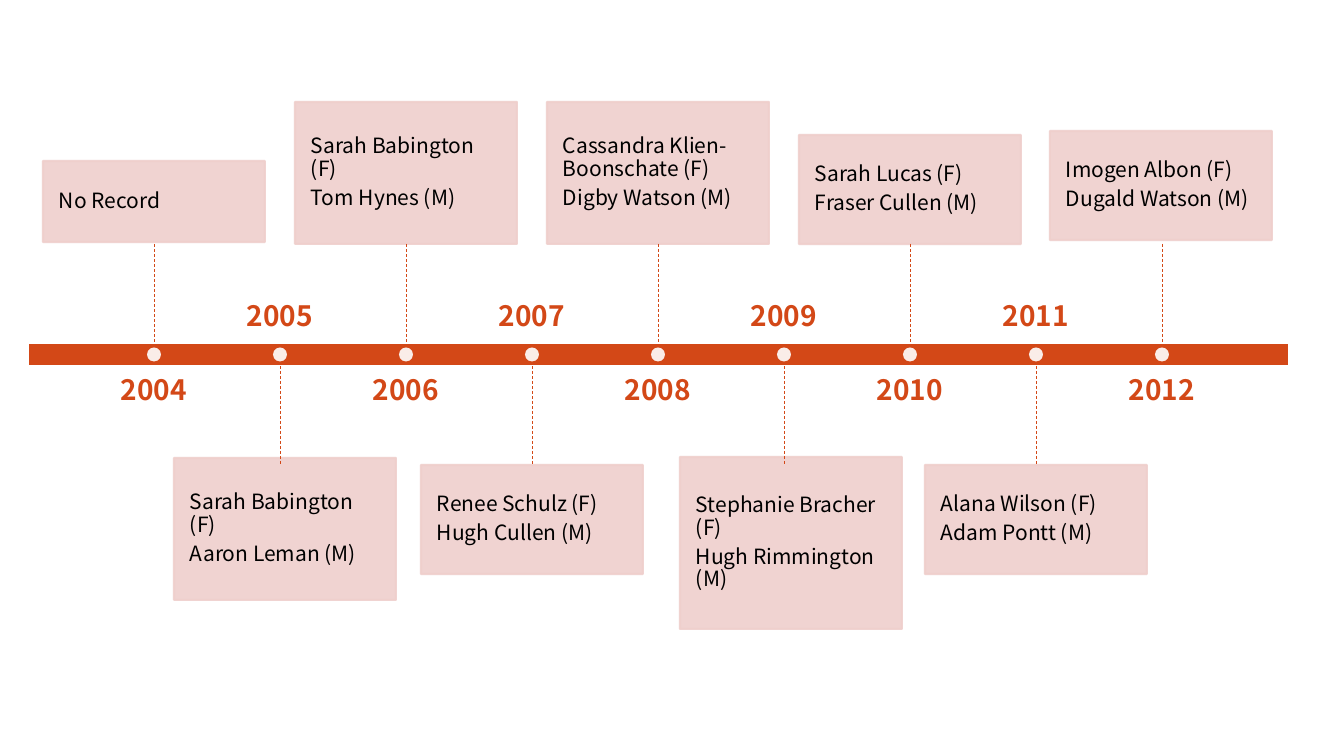
from lxml import etree
from pptx import Presentation
from pptx import util as u
from pptx.dml.color import RGBColor
from pptx.enum import dml, shapes, text
from pptx.oxml.ns import qn

PX = 914400 / 100.8
FIRST_YEAR, FIRST_X, YEAR_STEP = 2004, 154, 126
BAR_TOP, BAR_HEIGHT = 343, 23
BAR_BOTTOM = BAR_TOP + BAR_HEIGHT
STEM, CARD_WIDTH, DOT = 99, 222, 14
LABEL_WIDTH, LABEL_HEIGHT, LABEL_GAP = 202, 66, 10

# One entry per year: card shift from its year, top, height, names
CARDS = [
    (0, 161, 81, ["No Record"]),
    (5, 458, 142, ["Sarah Babington (F)", "Aaron Leman (M)"]),
    (0, 102, 142, ["Sarah Babington (F)", "Tom Hynes (M)"]),
    (0, 465, 109, ["Renee Schulz (F)", "Hugh Cullen (M)"]),
    (0, 102, 142, ["Cassandra Klien-Boonschate (F)", "Digby Watson (M)"]),
    (7, 457, 172, ["Stephanie Bracher (F)", "Hugh Rimmington (M)"]),
    (0, 135, 109, ["Sarah Lucas (F)", "Fraser Cullen (M)"]),
    (0, 465, 109, ["Alana Wilson (F)", "Adam Pontt (M)"]),
    (-1, 131, 109, ["Imogen Albon (F)", "Dugald Watson (M)"]),
]


def px(length):
    return u.Emu(round(length * PX))


def paint(fill, color, opacity=100):
    """Make a fill solid, with opacity in percent."""
    fill.solid()
    fill.fore_color.rgb = RGBColor.from_string(color)
    if opacity < 100:
        for srgb in fill._xPr.iter(qn("a:srgbClr")):
            etree.SubElement(srgb, qn("a:alpha"), val=str(opacity * 1000))


def write(frame, lines, size, color, bold=False, font="Noto Sans CJK JP", inset=0,
          align=text.PP_ALIGN.LEFT, anchor=text.MSO_ANCHOR.TOP, gap=4.5):
    """Fill a text frame with one paragraph for each line."""
    frame.word_wrap = True
    frame.vertical_anchor = anchor
    frame.margin_left = frame.margin_right = px(inset)
    frame.margin_top = frame.margin_bottom = px(inset)
    for index, line in enumerate(lines):
        paragraph = frame.add_paragraph() if index else frame.paragraphs[0]
        paragraph.alignment = align
        paragraph.line_spacing = 0.9
        paragraph.space_after = u.Pt(gap)
        run = paragraph.add_run()
        run.text = line
        run.font.name, run.font.size, run.font.bold = font, u.Pt(size), bold
        paint(run.font.fill, color)


class Timeline:
    accent, card_color, ink, paper = "D34817", "EFCFCC", "000000", "FFFFFF"
    opacity = 90

    def __init__(self, slide):
        self.slide = slide

    def block(self, kind, left, top, width, height, color, opacity=100):
        shape = self.slide.shapes.add_shape(kind, px(left), px(top), px(width), px(height))
        shape.shadow.inherit = False
        paint(shape.fill, color, opacity)
        shape.line.fill.background()
        return shape

    def outline(self, shape, color, opacity=100):
        paint(shape.line.fill, color, opacity)
        shape.line.width = u.Pt(1.5)

    def bar(self):
        bar = self.block(shapes.MSO_SHAPE.RECTANGLE, 28, BAR_TOP, 1261, BAR_HEIGHT, self.accent)
        self.outline(bar, self.paper)

    def year(self, center, year, above):
        top = BAR_TOP - LABEL_GAP - LABEL_HEIGHT if above else BAR_BOTTOM + LABEL_GAP
        label = self.slide.shapes.add_textbox(
            px(center - LABEL_WIDTH / 2), px(top), px(LABEL_WIDTH), px(LABEL_HEIGHT))
        write(label.text_frame, [str(year)], 20, self.accent, bold=True,
              align=text.PP_ALIGN.CENTER,
              anchor=text.MSO_ANCHOR.BOTTOM if above else text.MSO_ANCHOR.TOP, gap=7)

    def card(self, center, top, height, names):
        card = self.block(shapes.MSO_SHAPE.RECTANGLE, center - CARD_WIDTH / 2, top,
                          CARD_WIDTH, height, self.card_color, self.opacity)
        self.outline(card, self.card_color, self.opacity)
        write(card.text_frame, names, 15, self.ink, inset=16, anchor=text.MSO_ANCHOR.MIDDLE)

    def stem(self, center, top):
        stem = self.slide.shapes.add_connector(
            shapes.MSO_CONNECTOR.STRAIGHT, px(center), px(top), px(center), px(top + STEM))
        paint(stem.line.fill, self.accent)
        stem.line.width = u.Pt(0.5)
        stem.line.dash_style = dml.MSO_LINE.DASH
        etree.SubElement(stem._element.spPr, qn("a:effectLst"))

    def dot(self, center):
        self.block(shapes.MSO_SHAPE.OVAL, center - DOT / 2, BAR_TOP + (BAR_HEIGHT - DOT) / 2,
                   DOT, DOT, self.paper, self.opacity)


def main():
    deck = Presentation()
    deck.slide_width, deck.slide_height = px(1344), px(756)
    timeline = Timeline(deck.slides.add_slide(deck.slide_layouts[6]))
    timeline.bar()
    for index, (shift, top, height, names) in enumerate(CARDS):
        center = FIRST_X + index * YEAR_STEP
        card_below = index % 2 == 1
        timeline.year(center, FIRST_YEAR + index, above=card_below)
        timeline.card(center + shift, top, height, names)
        timeline.stem(center, BAR_BOTTOM if card_below else BAR_TOP - STEM)
        timeline.dot(center)
    deck.save("out.pptx")


if __name__ == "__main__":
    main()
